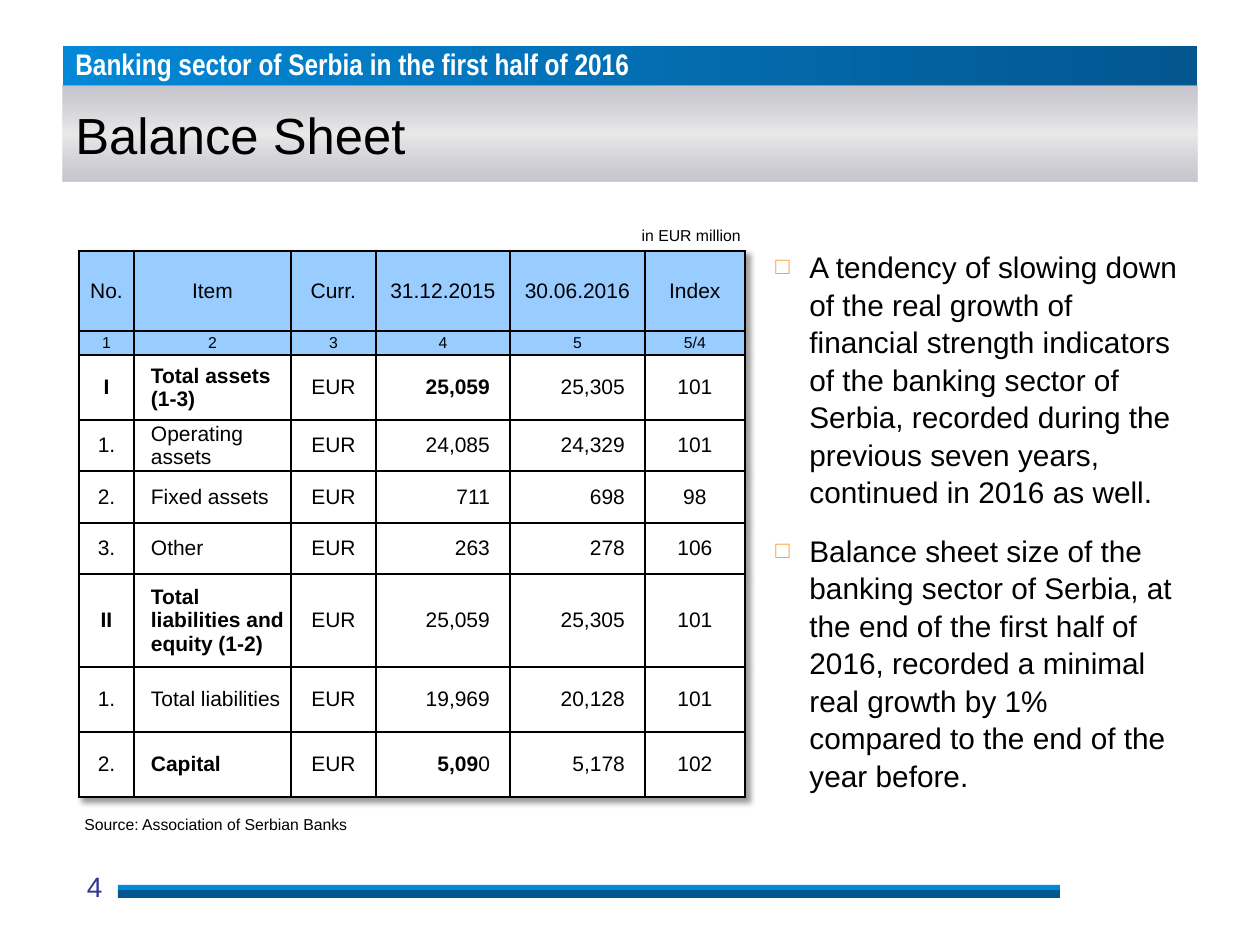
from dataclasses import dataclass
from lxml import etree
from pptx import Presentation
from pptx import util as u
from pptx.dml.color import RGBColor
from pptx.enum import shapes, text
from pptx.oxml import ns

SCALE = u.Inches(1) / 126
LEFT, MID, RIGHT = text.PP_ALIGN.LEFT, text.PP_ALIGN.CENTER, text.PP_ALIGN.RIGHT
TOP, CENTER = text.MSO_ANCHOR.TOP, text.MSO_ANCHOR.MIDDLE


@dataclass(frozen=True)
class Theme:
    font: str = "Arial"
    narrow: str = "Arial Narrow"
    ink: str = "000000"
    paper: str = "FFFFFF"
    sky: str = "0388D7"
    navy: str = "035690"
    gray: str = "B9B7C0"
    pale: str = "EAEAEA"
    head: str = "99CCFF"
    mark: str = "FF9933"
    page: str = "333399"
    title: int = 29
    body: int = 17
    number: int = 16
    cell: int = 12
    note: int = 9


T = Theme()

COLS = [55, 157, 85, 134, 135, 100]
ROWS = [80, 24, 65, 51, 52, 51, 93, 65, 65]
DATA = [
    ["No.", "Item", "Curr.", "31.12.2015", "30.06.2016", "Index"],
    ["1", "2", "3", "4", "5", "5/4"],
    ["*I*", "*Total assets (1-3)*", "EUR", "*25,059*", "25,305", "101"],
    ["1.", "Operating assets", "EUR", "24,085", "24,329", "101"],
    ["2.", "Fixed assets", "EUR", "711", "698", "98"],
    ["3.", "Other", "EUR", "263", "278", "106"],
    ["*II*", "*Total liabilities and equity (1-2)*", "EUR", "25,059", "25,305", "101"],
    ["1.", "Total liabilities", "EUR", "19,969", "20,128", "101"],
    ["2.", "*Capital*", "EUR", "*5,09*0", "5,178", "102"],
]
POINTS = [
    "A tendency of slowing down of the real growth of financial strength indicators "
    "of the banking sector of Serbia, recorded during the previous seven years, "
    "continued in 2016 as well.",
    "Balance sheet size of the banking sector of Serbia, at the end of the first half "
    "of 2016, recorded a minimal real growth by 1% compared to the end of the year before.",
]


def px(n):
    return u.Emu(round(n * SCALE))


def rgb(color):
    return RGBColor.from_string(color)


def add(parent, tag, **attrs):
    node = etree.SubElement(parent, ns.qn(tag))
    for key, value in attrs.items():
        node.set(key, str(value))
    return node


def style(par, size, color=T.ink, align=LEFT, font=T.font, bold=None):
    par.alignment = align
    par.font.name = font
    par.font.size = u.Pt(size)
    par.font.bold = bold
    par.font.color.rgb = rgb(color)


def bar(slide, box, color=None):
    shape = slide.shapes.add_shape(shapes.MSO_SHAPE.RECTANGLE, *map(px, box))
    shape.shadow.inherit = False
    shape.line.fill.background()
    if color:
        shape.fill.solid()
        shape.fill.fore_color.rgb = rgb(color)
    return shape


def blend(shape, stops, angle):
    shape.fill.gradient()
    shape.fill.gradient_angle = angle
    stack = shape._element.spPr.find(ns.qn("a:gradFill")).find(ns.qn("a:gsLst"))
    for old in list(stack):
        stack.remove(old)
    for place, color, alpha in stops:
        stop = add(stack, "a:gs", pos=place * 1000)
        tint = add(stop, "a:srgbClr", val=color)
        if alpha < 100:
            add(tint, "a:alpha", val=alpha * 1000)


def write(shape, words, size, anchor=TOP, **look):
    frame = shape.text_frame
    frame.word_wrap = True
    frame.vertical_anchor = anchor
    frame.text = words
    style(frame.paragraphs[0], size, **look)
    return frame


def label(slide, box, words, size, anchor=TOP, **look):
    shape = slide.shapes.add_textbox(*map(px, box))
    return write(shape, words, size, anchor, **look)


def bullets(slide, box, points):
    frame = slide.shapes.add_textbox(*map(px, box)).text_frame
    frame.word_wrap = True
    for i, words in enumerate(points):
        par = frame.add_paragraph() if i else frame.paragraphs[0]
        par.text = words
        par.line_spacing = 1.05
        if i:
            par.space_before = u.Pt(12)
        props = par._p.get_or_add_pPr()
        props.set("marL", str(px(36)))
        props.set("indent", str(-px(34)))
        add(add(props, "a:buClr"), "a:srgbClr", val=T.mark)
        add(props, "a:buSzPct", val=80000)
        add(props, "a:buFont", typeface=T.font)
        add(props, "a:buChar", char="□")
        style(par, T.body)


def edge(cell, row, col):
    body, tail = row >= 2, col >= 3
    thick = {
        "L": col == 0 or (body and col == 3),
        "R": col == len(COLS) - 1 or (body and col == 2),
        "T": row == 0 or (row == 2 and tail),
        "B": row == len(ROWS) - 1 or (row == 1 and tail),
    }
    props = cell._tc.get_or_add_tcPr()
    for i, (side, heavy) in enumerate(thick.items()):
        line = etree.Element(ns.qn(f"a:ln{side}"), w=str(u.Pt(1.5 if heavy else 1)))
        add(add(line, "a:solidFill"), "a:srgbClr", val=T.ink)
        props.insert(i, line)


def fill(cell, words, row, col):
    body = row >= 2
    figure = body and col in (3, 4)
    item = body and col == 1
    cell.margin_top = cell.margin_bottom = 0
    cell.margin_left = px(5 if body else 9)
    cell.margin_right = px(20 if figure else 5 if body else 9)
    cell.vertical_anchor = CENTER
    cell.fill.solid()
    cell.fill.fore_color.rgb = rgb(T.paper if body else T.head)
    par = cell.text_frame.paragraphs[0]
    for i, part in enumerate(words.split("*")):
        if part:
            run = par.add_run()
            run.text = part
            run.font.bold = i % 2 == 1
    if item:
        par._p.get_or_add_pPr().set("marL", str(px(12)))
    align = RIGHT if figure else LEFT if item else MID
    style(par, T.note if row == 1 else T.cell, align=align)
    edge(cell, row, col)


def shade(table):
    effect = etree.Element(ns.qn("a:effectLst"))
    table._tbl.tblPr.insert(0, effect)
    cast = add(effect, "a:outerShdw", blurRad=px(6), dist=px(6), dir=2700000,
               algn="tl", rotWithShape=0)
    add(add(cast, "a:srgbClr", val=T.ink), "a:alpha", val=40000)


def sheet(slide, left, top):
    box = (left, top, sum(COLS), sum(ROWS))
    table = slide.shapes.add_table(len(ROWS), len(COLS), *map(px, box)).table
    table.first_row = table.horz_banding = False
    for col, width in zip(table.columns, COLS):
        col.width = px(width)
    for row, height in zip(table.rows, ROWS):
        row.height = px(height)
    for r, line in enumerate(DATA):
        for c, words in enumerate(line):
            fill(table.cell(r, c), words, r, c)
    shade(table)


def main():
    deck = Presentation()
    deck.slide_width, deck.slide_height = px(1260), px(945)
    slide = deck.slides.add_slide(deck.slide_layouts[6])

    strip = bar(slide, (63, 46, 1134, 40))
    blend(strip, [(0, T.sky, 100), (100, T.navy, 100)], 0)
    frame = write(strip, "Banking sector of Serbia in the first half of 2016", T.body,
                  color=T.paper, font=T.narrow, bold=True)
    frame.margin_top, frame.margin_bottom = 0, px(6)

    bar(slide, (118, 890, 942, 8), T.navy)
    bar(slide, (118, 885, 942, 5), T.sky)

    banner = bar(slide, (63, 86, 1134, 96))
    blend(banner, [(0, T.gray, 79), (50, T.pale, 100), (100, T.gray, 79)], 270)
    write(banner, "Balance Sheet", T.title, CENTER)

    label(slide, (54, 863, 81, 55), "4", T.number, color=T.page, align=MID)
    bullets(slide, (761, 241, 436, 325), POINTS)
    label(slide, (72, 808, 601, 32), "Source: Association of Serbian Banks", T.note, CENTER)
    label(slide, (265, 219, 488, 32), "in EUR million", T.note, CENTER, align=RIGHT)
    sheet(slide, 79, 251)

    deck.save("out.pptx")


if __name__ == "__main__":
    main()
